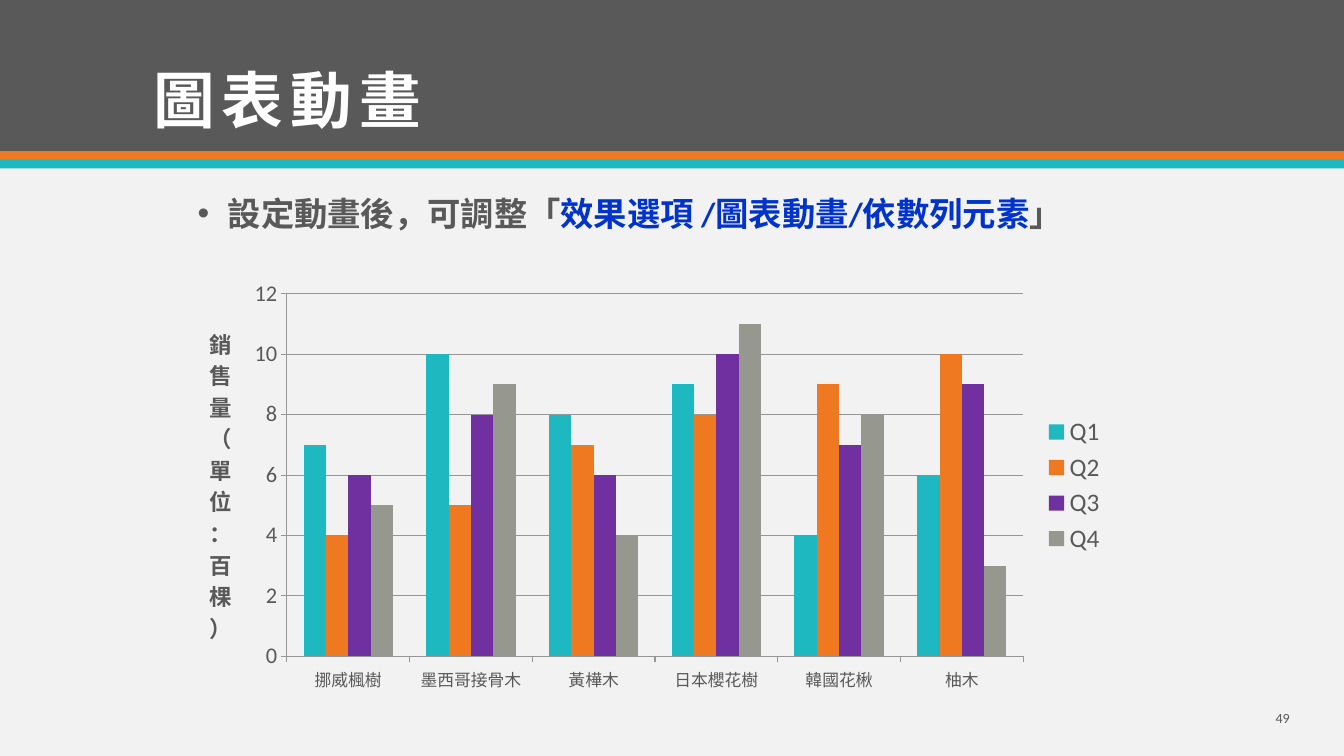
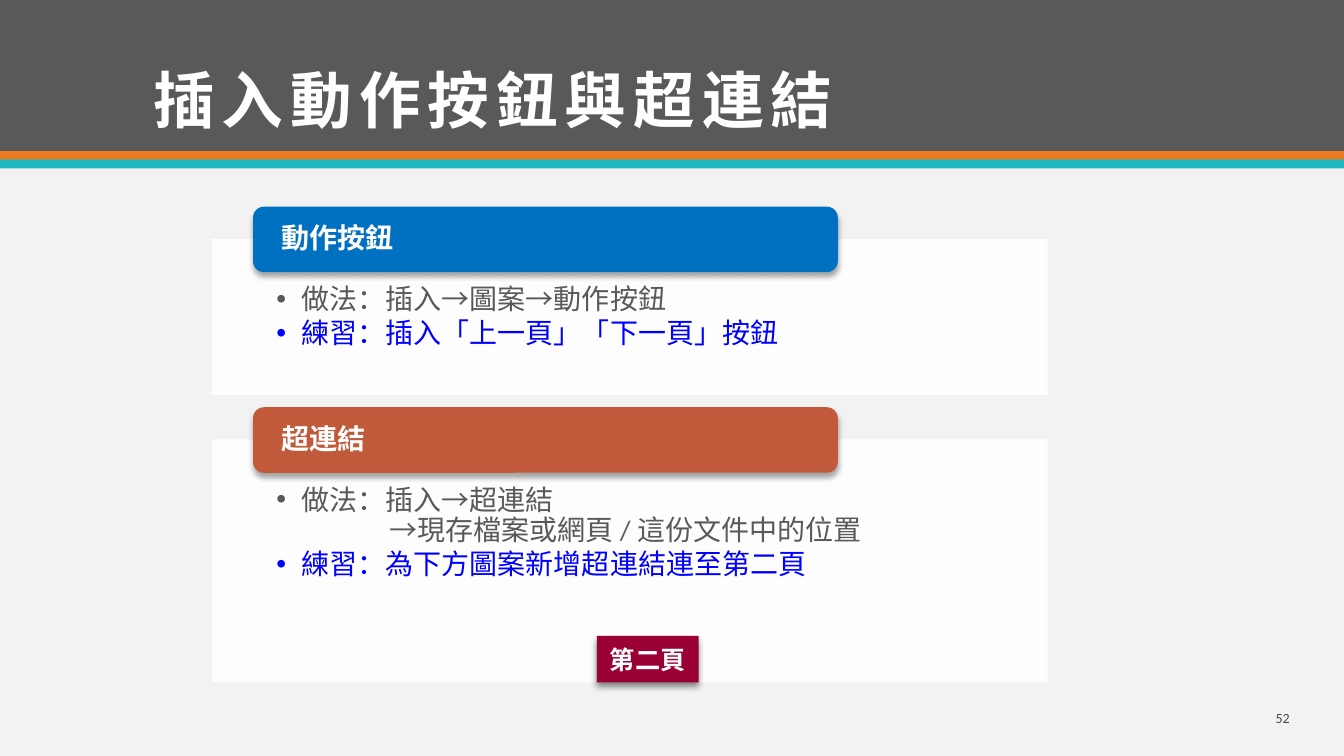
import dataclasses

import pptx
import pptx.chart.data
import pptx.dml.color
import pptx.enum.chart
import pptx.enum.shapes
import pptx.enum.text
import pptx.oxml
import pptx.oxml.ns
import pptx.util

Inches, Pt = pptx.util.Inches, pptx.util.Pt
qn = pptx.oxml.ns.qn
SHAPE = pptx.enum.shapes.MSO_SHAPE
ANCHOR = pptx.enum.text.MSO_ANCHOR
ALIGN = pptx.enum.text.PP_ALIGN
NO_FIT = pptx.enum.text.MSO_AUTO_SIZE.NONE


@dataclasses.dataclass(frozen=True)
class Theme:
    paper: str = "F2F2F2"
    ink: str = "595959"
    white: str = "FFFFFF"
    teal: str = "1EB8C1"
    orange: str = "EF7920"
    purple: str = "7030A0"
    gray: str = "969890"
    axis: str = "969696"
    accent: str = "0033CC"
    practice: str = "0000FF"
    blue: str = "0070C0"
    rust: str = "C05A3A"
    crimson: str = "990033"
    page: str = "474747"
    latin: str = "Calibri"
    cjk: str = "Noto Sans CJK SC"
    title: float = 44
    lead: float = 23.8
    text: float = 20
    label: float = 18
    axis_text: float = 16
    category: float = 12
    page_text: float = 10


T = Theme()

# Content
BANDS = [(0, 1.5, T.ink), (1.5, 0.09, T.orange), (1.58, 0.09, T.teal)]

CHART_SLIDE = {
    "title": "圖表動畫",
    "page": ("49", T.ink),
    "lead": [("設定動畫後，可調整「", T.ink),
             ("效果選項 /圖表動畫/依數列元素", T.accent),
             ("」", T.ink)],
    "axis": "銷售量（單位：百棵）",
    "categories": ["挪威楓樹", "墨西哥接骨木", "黃樺木", "日本櫻花樹", "韓國花楸", "柚木"],
    "series": [("Q1", [7, 10, 8, 9, 4, 6], T.teal),
               ("Q2", [4, 5, 7, 8, 9, 10], T.orange),
               ("Q3", [6, 8, 6, 10, 7, 9], T.purple),
               ("Q4", [5, 9, 4, 11, 8, 3], T.gray)],
}

# Each line: text, colour, left indent, bulleted
LINK_SLIDE = {
    "title": "插入動作按鈕與超連結",
    "page": ("52", T.page),
    "panels": [
        ("動作按鈕", T.blue, 2.37, 1.55, [
            ("做法：插入→圖案→動作按鈕", T.ink, 0.25, True),
            ("練習：插入「上一頁」「下一頁」按鈕", T.practice, 0.25, True)]),
        ("超連結", T.rust, 4.36, 2.41, [
            ("做法：插入→超連結", T.ink, 0.25, True),
            ("→現存檔案或網頁 / 這份文件中的位置", T.ink, 1.12, False),
            ("練習：為下方圖案新增超連結連至第二頁", T.practice, 0.25, True)]),
    ],
    "button": "第二頁",
}


# Helpers
def assign(obj, **values):
    for name, value in values.items():
        setattr(obj, name, value)


def rgb(color):
    return pptx.dml.color.RGBColor.from_string(color)


def place(sp, x, y, w, h):
    assign(sp, left=Inches(x), top=Inches(y), width=Inches(w), height=Inches(h))


def frame(sp, insets=(0.1, 0.05, 0.1, 0.05), **values):
    tf = sp.text_frame
    sides = ("margin_left", "margin_top", "margin_right", "margin_bottom")
    assign(tf, **{side: Inches(v) for side, v in zip(sides, insets)})
    assign(tf, **{"word_wrap": True, "auto_size": NO_FIT, **values})
    return tf


def style(font, size, color=T.ink, bold=False, name=T.latin):
    assign(font, size=Pt(size), bold=bold, name=name)
    font.color.rgb = rgb(color)


def add_run(p, text, size, color=T.ink, bold=False, name=T.latin):
    r = p.add_run()
    r.text = text
    style(r.font, size, color, bold, name)
    rpr = r._r.get_or_add_rPr()
    ea = rpr.makeelement(qn("a:ea"), {"typeface": T.cjk})
    rpr.find(qn("a:latin")).addnext(ea)
    return r


def indent(p, left, bulleted=True, hang=0.25):
    ppr = p._p.get_or_add_pPr()
    ppr.set("marL", str(Inches(left)))
    ppr.set("indent", str(-Inches(hang) if bulleted else 0))
    if not bulleted:
        ppr.append(ppr.makeelement(qn("a:buNone"), {}))


def add_block(slide, kind, box, color, shadow=None):
    sp = slide.shapes.add_shape(kind, *map(Inches, box))
    sp.shadow.inherit = False
    sp.fill.solid()
    sp.fill.fore_color.rgb = rgb(color)
    sp.line.fill.background()
    if shadow:
        alpha, blur, dist = shadow
        sp._element.spPr.find(qn("a:effectLst")).append(pptx.oxml.parse_xml(
            f'<a:outerShdw {pptx.oxml.ns.nsdecls("a")} blurRad="{Pt(blur)}" '
            f'dist="{Pt(dist)}" dir="5400000" algn="t" rotWithShape="0">'
            f'<a:srgbClr val="000000"><a:alpha val="{alpha * 1000}"/></a:srgbClr>'
            '</a:outerShdw>'))
    return sp


def add_bands(prs, slide):
    """Draw the bands once and hand them to the master."""
    fill = prs.slide_master.background.fill
    fill.solid()
    fill.fore_color.rgb = rgb(T.paper)
    tree = prs.slide_master.shapes._spTree
    for i, (y, h, color) in enumerate(BANDS):
        sp = add_block(slide, SHAPE.RECTANGLE, (0, y, 13.33, h), color)
        sp.width = prs.slide_width
        tree.insert(2 + i, sp._element)


def add_slide(prs, layout, content):
    slide = prs.slides.add_slide(prs.slide_layouts[layout])
    title = slide.shapes.title
    place(title, 1.42, 0.28, 10.5, 1.13)
    p = frame(title, vertical_anchor=ANCHOR.BOTTOM).paragraphs[0]
    assign(p, alignment=ALIGN.LEFT, line_spacing=0.9)
    r = add_run(p, content["title"], T.title, T.white, True, T.cjk)
    r._r.get_or_add_rPr().set("spc", "500")

    number, color = content["page"]
    box = slide.shapes.add_textbox(*map(Inches, (11.39, 6.97, 1.5, 0.3)))
    p = frame(box, vertical_anchor=ANCHOR.MIDDLE).paragraphs[0]
    p.alignment = ALIGN.RIGHT
    add_run(p, number, T.page_text, color)
    return slide


# Chart slide
def add_sales_chart(slide, content):
    data = pptx.chart.data.CategoryChartData()
    data.categories = content["categories"]
    for name, values, _ in content["series"]:
        data.add_series(name, values)
    chart = slide.shapes.add_chart(
        pptx.enum.chart.XL_CHART_TYPE.COLUMN_CLUSTERED,
        *map(Inches, (1.86, 2.69, 9.21, 4.25)), data).chart
    style(chart.font, T.label)
    assign(chart, has_title=False, has_legend=True)
    assign(chart.legend, include_in_layout=False,
           position=pptx.enum.chart.XL_LEGEND_POSITION.RIGHT)
    style(chart.legend.font, T.label)

    plot = chart.plots[0]
    assign(plot, gap_width=150, overlap=0, vary_by_categories=False)
    for series, (_, _, color) in zip(plot.series, content["series"]):
        series.format.fill.solid()
        series.format.fill.fore_color.rgb = rgb(color)
        series.invert_if_negative = False

    cat, val = chart.category_axis, chart.value_axis
    assign(val, has_major_gridlines=True, minimum_scale=0, maximum_scale=12, major_unit=2)
    for axis, size in ((cat, T.category), (val, T.axis_text)):
        axis.major_tick_mark = pptx.enum.chart.XL_TICK_MARK.OUTSIDE
        style(axis.tick_labels.font, size)
    for part in (cat, val, val.major_gridlines):
        part.format.line.width = Pt(0.75)
        part.format.line.color.rgb = rgb(T.axis)

    # Stacked upright axis title
    tf = val.axis_title.text_frame
    add_run(tf.paragraphs[0], content["axis"], T.axis_text, bold=True)
    body = tf._txBody.find(qn("a:bodyPr"))
    for key, value in (("rot", "0"), ("vert", "wordArtVert")):
        body.set(key, value)

    # Fixed inner plot area
    area = chart._chartSpace.chart.plotArea
    for old in area.findall(qn("c:layout")):
        area.remove(old)
    modes = '<c:layoutTarget val="inner"/><c:xMode val="edge"/><c:yMode val="edge"/>'
    sizes = "".join(f'<c:{k} val="{v}"/>' for k, v in
                    (("x", 0.107), ("y", 0.053), ("w", 0.793), ("h", 0.846)))
    area.insert(0, pptx.oxml.parse_xml(
        f'<c:layout {pptx.oxml.ns.nsdecls("c")}><c:manualLayout>{modes}{sizes}'
        '</c:manualLayout></c:layout>'))


def build_chart_slide(prs, content):
    slide = add_slide(prs, 1, content)
    add_bands(prs, slide)
    body = slide.placeholders[1]
    place(body, 1.86, 1.94, 9.13, 0.63)
    p = frame(body).paragraphs[0]
    assign(p, line_spacing=0.8, space_before=Pt(0))
    indent(p, 0.3, hang=0.3)
    for text, color in content["lead"]:
        add_run(p, text, T.lead, color, True)
    add_sales_chart(slide, content)


# Link slide
def fill_panel(sp, top, height, lines):
    place(sp, 2.1, top, 8.29, height)
    sp.fill.solid()
    sp.fill.fore_color.rgb = rgb(T.white)
    color = sp._element.spPr.find(".//" + qn("a:srgbClr"))
    color.append(color.makeelement(qn("a:alpha"), {"val": "90000"}))
    tf = frame(sp, (0.64, 0.46, 0.64, 0.16), vertical_anchor=ANCHOR.TOP)
    for i, (text, color, left, bulleted) in enumerate(lines):
        p = tf.add_paragraph() if i else tf.paragraphs[0]
        wraps_on = i + 1 < len(lines) and not lines[i + 1][3]
        assign(p, line_spacing=0.9, space_before=Pt(0),
               space_after=Pt(0 if wraps_on else 3))
        indent(p, left, bulleted)
        add_run(p, text, T.text, color)


def build_link_slide(prs, content):
    slide = add_slide(prs, 3, content)
    for i, (head, color, top, height, lines) in enumerate(content["panels"]):
        fill_panel(slide.placeholders[i + 1], top, height, lines)
        tab = add_block(slide, SHAPE.ROUNDED_RECTANGLE,
                        (2.51, top - 0.32, 5.8, 0.65), color, (35, 4, 3))
        p = frame(tab, (0.25, 0, 0.25, 0), vertical_anchor=ANCHOR.MIDDLE).paragraphs[0]
        assign(p, alignment=ALIGN.LEFT, line_spacing=0.9)
        add_run(p, head, T.text, T.white, True)

    button = add_block(slide, SHAPE.RECTANGLE, (5.92, 6.31, 1.01, 0.46),
                       T.crimson, (45, 5, 3))
    p = frame(button, (0.12, 0.08, 0.12, 0.08), word_wrap=False,
              vertical_anchor=ANCHOR.MIDDLE).paragraphs[0]
    p.alignment = ALIGN.CENTER
    add_run(p, content["button"], T.label, T.white, True, T.cjk)


def main():
    prs = pptx.Presentation()
    assign(prs, slide_width=Inches(13.33), slide_height=Inches(7.5))
    build_chart_slide(prs, CHART_SLIDE)
    build_link_slide(prs, LINK_SLIDE)
    prs.save("out.pptx")


if __name__ == "__main__":
    main()
